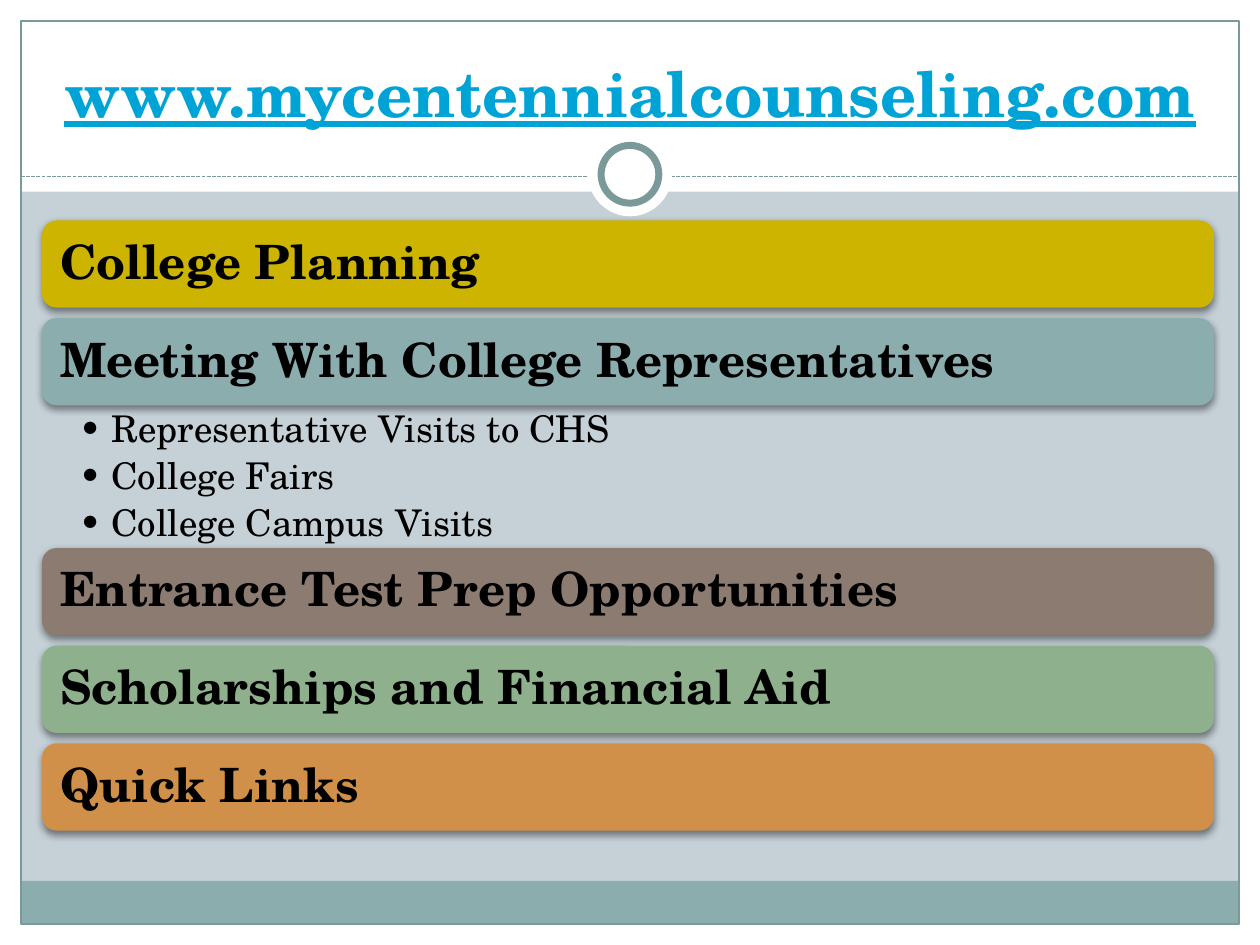
from lxml import etree
from pptx import Presentation
from pptx import util as u
from pptx.dml.color import RGBColor
from pptx.enum import dml, shapes, text
from pptx.oxml import ns, parse_xml

WHITE = RGBColor(0xFF, 0xFF, 0xFF)
BLACK = RGBColor(0, 0, 0)
BACKDROP = RGBColor(0xC5, 0xD1, 0xD7)
TEAL = RGBColor(0x8C, 0xAD, 0xAE)
FRAME = RGBColor(0x7C, 0x99, 0x9A)
LINK = RGBColor(0x00, 0xA3, 0xD6)
GOLD = RGBColor(0xCC, 0xB4, 0x00)
BROWN = RGBColor(0x8C, 0x7B, 0x70)
GREEN = RGBColor(0x8F, 0xB0, 0x8C)
ORANGE = RGBColor(0xD1, 0x90, 0x49)

FONT = "TeX Gyre Schola"
COLUMNS, ROWS = 120, 90
CELL = u.Inches(10) / COLUMNS
MARGIN, EDGE = 2, 4
BAR_WIDTH, BAR_HEIGHT, BAR_PITCH = 111.6, 8.3, 9.3
FIRST_BAR, VISITS_HEIGHT = 21, 13.6
RULE_ROW = 16.8

VISITS = ["Representative Visits to CHS", "College Fairs", "College Campus Visits"]
TOPICS = [
    ("College Planning", GOLD, []),
    ("Meeting With College Representatives", TEAL, VISITS),
    ("Entrance Test Prep Opportunities", BROWN, []),
    ("Scholarships and Financial Aid", GREEN, []),
    ("Quick Links", ORANGE, []),
]
SHADOW = (
    f'<a:effectLst {ns.nsdecls("a")}><a:outerShdw blurRad="50800" dist="25400" '
    'dir="5400000" rotWithShape="0"><a:srgbClr val="000000"><a:alpha val="45000"/>'
    '</a:srgbClr></a:outerShdw></a:effectLst>'
)


def cells(*counts):
    """Turn counts of grid cells into lengths."""
    return [u.Emu(round(count * CELL)) for count in counts]


def add_block(slide, place, fill=None, line=None, width=0.75,
              kind=shapes.MSO_SHAPE.RECTANGLE):
    """Draw a flat preset shape on the grid."""
    block = slide.shapes.add_shape(kind, *cells(*place))
    block.shadow.inherit = False
    if fill is None:
        block.fill.background()
    else:
        block.fill.solid()
        block.fill.fore_color.rgb = fill
    if line is None:
        block.line.fill.background()
    else:
        block.line.color.rgb = line
        block.line.width = u.Pt(width)
    return block


def write(holder, lines, size, color=BLACK, bold=False, underline=False,
          align=text.PP_ALIGN.LEFT, anchor=text.MSO_ANCHOR.TOP,
          insets=(0.1, 0.05, 0.1, 0.05), spacing=1.0, after=0, bullet=None):
    """Fill a shape with one paragraph per line, in a single format."""
    frame = holder.text_frame
    frame.word_wrap = True
    frame.vertical_anchor = anchor
    (frame.margin_left, frame.margin_top,
     frame.margin_right, frame.margin_bottom) = map(u.Inches, insets)
    for index, line in enumerate(lines):
        paragraph = frame.add_paragraph() if index else frame.paragraphs[0]
        paragraph.alignment = align
        paragraph.line_spacing = spacing
        paragraph.space_after = u.Pt(after)
        run = paragraph.add_run()
        run.text = line
        run.font.name = FONT
        run.font.size = u.Pt(size)
        run.font.bold = bold
        run.font.underline = underline
        run.font.color.rgb = color
        if bullet:
            hang = u.Inches(0.25)
            properties = paragraph._p.get_or_add_pPr()
            properties.set("marL", str(hang))
            properties.set("indent", str(-hang))
            etree.SubElement(properties, ns.qn("a:buFont")).set("typeface", FONT)
            etree.SubElement(properties, ns.qn("a:buChar")).set("char", bullet)


def add_frame(slide):
    """Draw the white margins, footer band, border, dashed rule and ring."""
    inner = COLUMNS - 2 * MARGIN
    for place in ((0, ROWS - MARGIN, COLUMNS, MARGIN), (0, 0, COLUMNS, 18.25),
                  (0, 0, MARGIN, ROWS), (COLUMNS - MARGIN, 0, MARGIN, ROWS)):
        add_block(slide, place, WHITE)
    add_block(slide, (MARGIN, 83.9, inner, 4.1), TEAL)
    add_block(slide, (MARGIN, MARGIN, inner, ROWS - 2 * MARGIN), line=FRAME)
    rule = slide.shapes.add_connector(
        shapes.MSO_CONNECTOR.STRAIGHT,
        *cells(MARGIN, RULE_ROW, COLUMNS - MARGIN, RULE_ROW))
    rule.line.color.rgb = FRAME
    rule.line.width = u.Pt(0.75)
    rule.line.dash_style = dml.MSO_LINE.SQUARE_DOT
    etree.SubElement(rule._element.spPr, ns.qn("a:effectLst"))
    for size, outline in ((8, None), (5.5, FRAME)):
        place = ((COLUMNS - size) / 2, 16.6 - size / 2, size, size)
        add_block(slide, place, WHITE, outline, 4, shapes.MSO_SHAPE.OVAL)


def add_text(slide, place, lines, **style):
    """Place a text box on the grid."""
    write(slide.shapes.add_textbox(*cells(*place)), lines, **style)


def add_topic(slide, top, topic, fill):
    """Draw one rounded topic bar with its soft shadow."""
    bar = add_block(slide, (EDGE, top, BAR_WIDTH, BAR_HEIGHT), fill,
                    kind=shapes.MSO_SHAPE.ROUNDED_RECTANGLE)
    properties = bar._element.spPr
    properties.replace(properties.find(ns.qn("a:effectLst")), parse_xml(SHADOW))
    write(bar, [topic], size=27, bold=True, anchor=text.MSO_ANCHOR.MIDDLE,
          insets=(0.11,) * 4, spacing=0.9)


def main():
    """Build the counseling topics slide."""
    deck = Presentation()
    deck.slide_width, deck.slide_height = cells(COLUMNS, ROWS)
    slide = deck.slides.add_slide(deck.slide_layouts[6])
    slide.background.fill.solid()
    slide.background.fill.fore_color.rgb = BACKDROP
    add_frame(slide)
    add_text(slide, (EDGE, 3, COLUMNS - 2 * EDGE, 10),
             ["www.mycentennialcounseling.com"], size=36, color=LINK, bold=True,
             underline=True, align=text.PP_ALIGN.CENTER,
             anchor=text.MSO_ANCHOR.BOTTOM)
    top = FIRST_BAR
    for topic, fill, details in TOPICS:
        add_topic(slide, top, topic, fill)
        if details:
            top += BAR_HEIGHT
            add_text(slide, (EDGE, top, BAR_WIDTH, VISITS_HEIGHT), details,
                     size=21, insets=(0.3, 0.04, 0.21, 0.04), spacing=0.9,
                     after=4.2, bullet="•")
            top += VISITS_HEIGHT
        else:
            top += BAR_PITCH
    deck.save("out.pptx")


if __name__ == "__main__":
    main()
